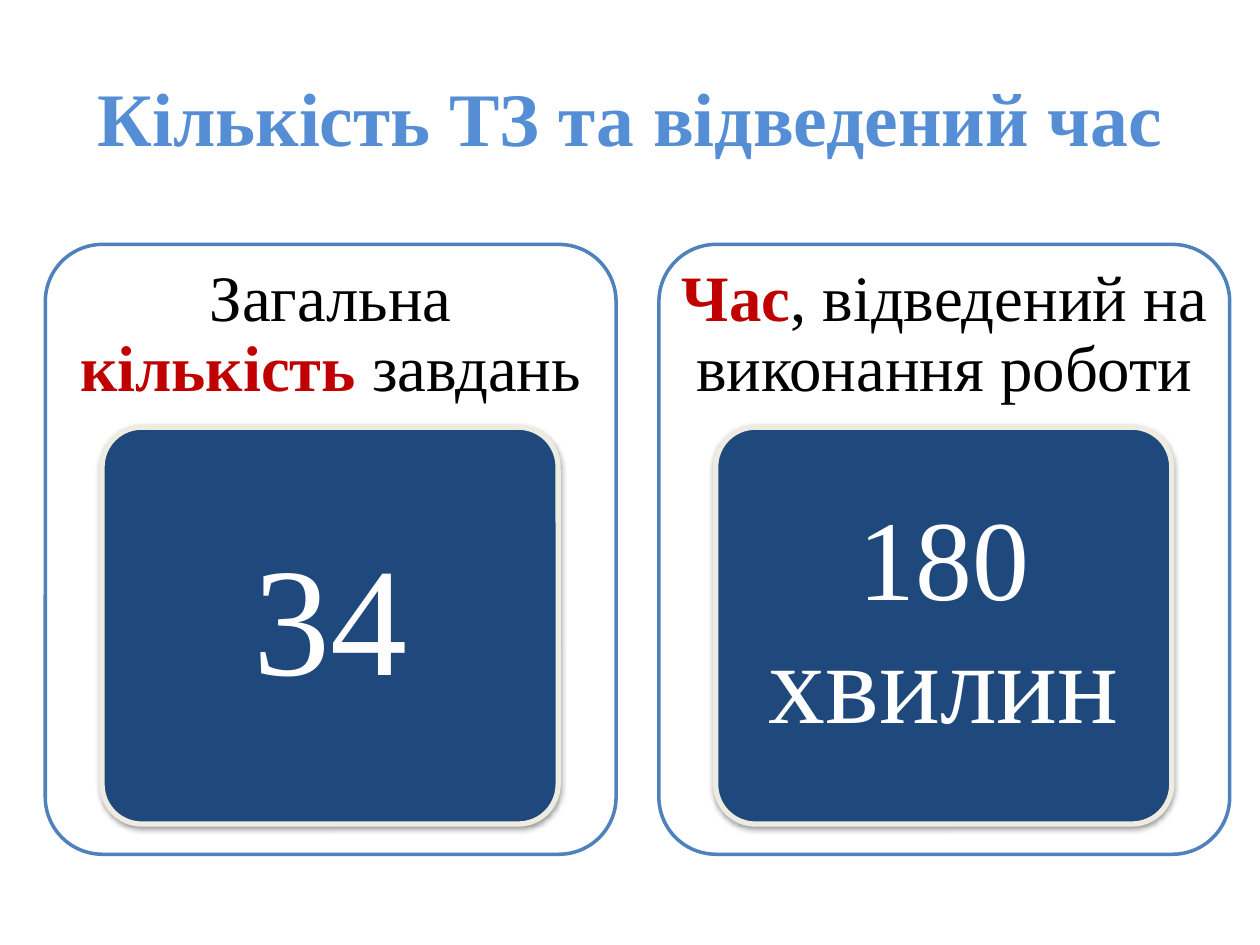
"""Build the slide on the number of test tasks and the time allowed."""
from pptx import Presentation
from pptx.dml.color import RGBColor
from pptx.enum.shapes import MSO_SHAPE as Shape
from pptx.enum.text import MSO_ANCHOR as Anchor, PP_ALIGN as Align
from pptx.oxml import parse_xml
from pptx.oxml.ns import nsdecls
from pptx.util import Inches, Pt

COLORS = {
    "title": "558ED5", "white": "FFFFFF", "black": "000000", "accent": "C00000",
    "outline": "4F81BD", "tile": "1F497D", "rim": "EEECE1",
}
FONT = "Times New Roman"


class Board:
    """Hold the style and the current slide."""

    def __init__(self, deck):
        self.slide = deck.slides.add_slide(deck.slide_layouts[5])

    def color(self, name):
        return RGBColor.from_string(COLORS[name])

    def fill_text(self, frame, parts, size, insets):
        frame.word_wrap = True
        frame.vertical_anchor = Anchor.MIDDLE
        side, edge = insets
        frame.margin_left = frame.margin_right = Inches(side)
        frame.margin_top = frame.margin_bottom = Inches(edge)
        paragraph = frame.paragraphs[0]
        paragraph.alignment = Align.CENTER
        paragraph.font.name = FONT
        paragraph.font.size = Pt(size)
        for words, color, bold in parts:
            run = paragraph.add_run()
            run.text = words
            run.font.color.rgb = self.color(color)
            run.font.bold = bold
        return paragraph

    def title(self, words, box):
        title = self.slide.shapes.title
        title.left, title.top, title.width, title.height = map(Inches, box)
        self.fill_text(title.text_frame, [(words, "title", True)], 43.2, (0.1, 0.05))

    def text(self, parts, box, size, insets):
        label = self.slide.shapes.add_textbox(*map(Inches, box))
        self.fill_text(label.text_frame, parts, size, insets).line_spacing = 0.9

    def panel(self, box, fill, line, width):
        panel = self.slide.shapes.add_shape(Shape.ROUNDED_RECTANGLE, *map(Inches, box))
        panel.adjustments[0] = 0.1
        panel.fill.solid()
        panel.fill.fore_color.rgb = self.color(fill)
        panel.line.color.rgb = self.color(line)
        panel.line.width = Pt(width)
        panel.shadow.inherit = False
        return panel

    def cast_shadow(self, panel):
        effects = panel._element.spPr.find("{*}effectLst")
        effects.append(parse_xml(
            f'<a:outerShdw {nsdecls("a")} blurRad="{Pt(3.1)}" dist="{Pt(1.6)}" '
            'dir="5400000" rotWithShape="0"><a:srgbClr val="000000">'
            '<a:alpha val="38000"/></a:srgbClr></a:outerShdw>'))

    def card(self, left, heading, value, size, insets):
        top, width, heading_height = 1.94, 4.53, 1.45
        self.panel((left, top, width, 4.84), "white", "outline", 2)
        self.text(heading, (left, top, width, heading_height), 37, (0.15, 0.15))
        tile_left, tile_top = left + 0.45, top + heading_height
        tile_width, tile_height, gap = 3.62, 3.15, 0.09
        tile = self.panel((tile_left, tile_top, tile_width, tile_height), "tile", "rim", 3)
        self.cast_shadow(tile)
        inner = (tile_left + gap, tile_top + gap,
                 tile_width - 2 * gap, tile_height - 2 * gap)
        self.text([(value, "white", False)], inner, size, insets)


def main():
    deck = Presentation()
    deck.slide_width, deck.slide_height = Inches(10), Inches(7.5)
    board = Board(deck)
    board.title("Кількість ТЗ та відведений час", (0.5, 0.3, 9, 1.25))
    count = [("Загальна ", "black", False), ("кількість", "accent", True),
             (" завдань", "black", False)]
    time = [("Час", "accent", True), (", відведений на виконання роботи", "black", False)]
    cards = [(count, "34", 88, (0.24, 0.18)), (time, "180 хвилин", 65, (0.18, 0.14))]
    for column, card in enumerate(cards):
        board.card(0.36 + column * 4.87, *card)
    deck.save("out.pptx")


if __name__ == "__main__":
    main()
